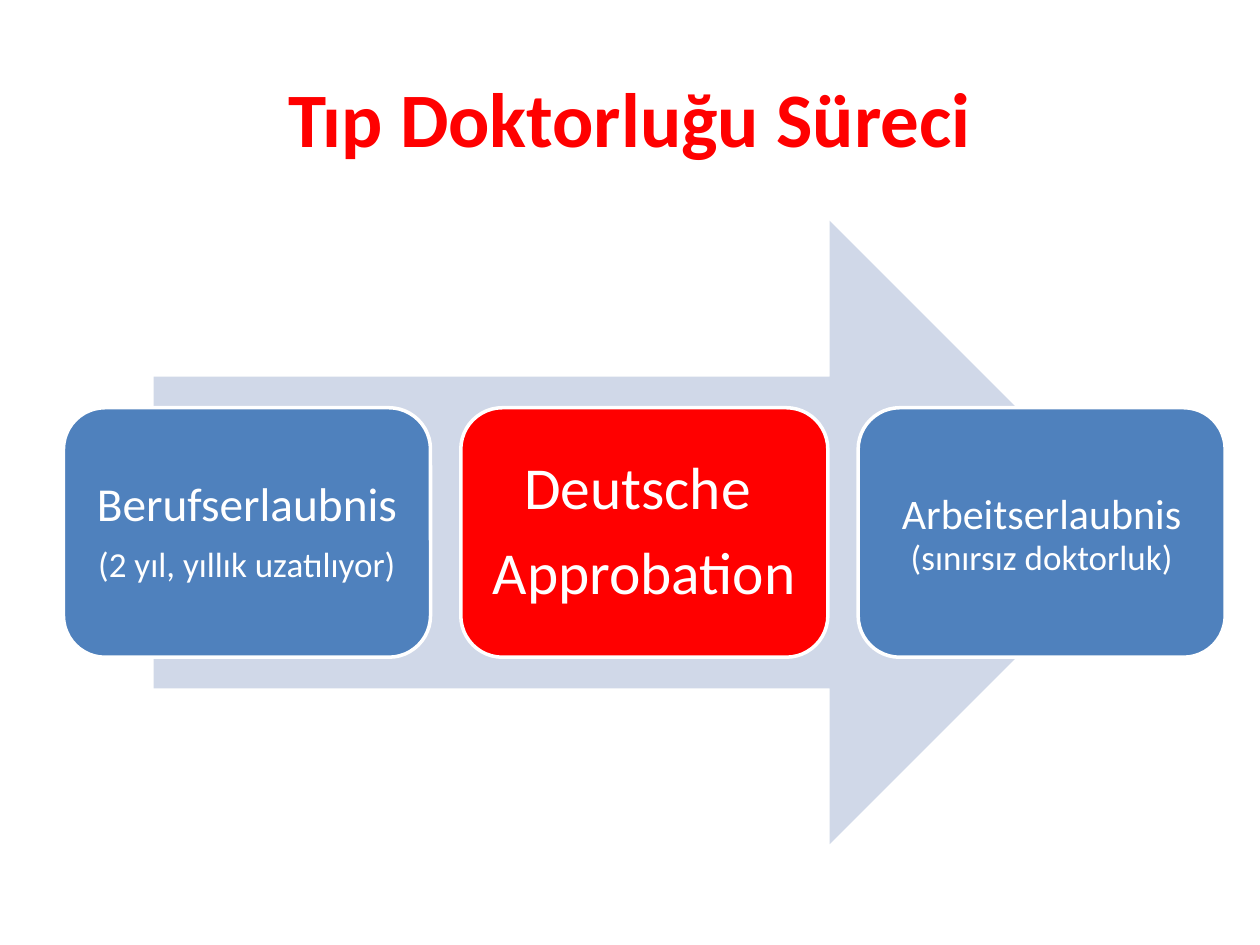
from dataclasses import dataclass

from pptx import Presentation
from pptx.dml.color import RGBColor as RGB
from pptx.enum.shapes import MSO_SHAPE as SHAPE
from pptx.enum.text import MSO_ANCHOR as ANCHOR, PP_ALIGN as ALIGN
from pptx.util import Cm, Pt


@dataclass(frozen=True)
class Theme:
    font: str = "Calibri"
    red: RGB = RGB(0xFF, 0x00, 0x00)
    blue: RGB = RGB(0x4F, 0x81, 0xBD)
    pale: RGB = RGB(0xD0, 0xD8, 0xE8)
    white: RGB = RGB(0xFF, 0xFF, 0xFF)
    title: int = 44
    large: int = 34
    gap: int = 28
    medium: int = 27
    small: int = 24
    note: int = 20


class Deck:
    def __init__(self, prs, theme):
        self.theme = theme
        self.slide = prs.slides.add_slide(prs.slide_layouts[5])

    def place(self, sp, box):
        for name, value in zip(("left", "top", "width", "height"), box):
            setattr(sp, name, Cm(value))

    def add_text(self, p, text, size, color, bold=False):
        r = p.add_run()
        r.text = text
        r.font.color.rgb = color
        style = {"name": self.theme.font, "size": Pt(size), "bold": bold}
        for name, value in style.items():
            setattr(r.font, name, value)

    def title(self, text, box):
        sp = self.slide.shapes.title
        self.place(sp, box)
        tf = sp.text_frame
        tf.vertical_anchor = ANCHOR.MIDDLE
        p = tf.paragraphs[0]
        p.alignment = ALIGN.CENTER
        self.add_text(p, text, self.theme.title, self.theme.red, True)

    def shape(self, kind, box, fill):
        sp = self.slide.shapes.add_shape(kind, *map(Cm, box))
        sp.shadow.inherit = False
        sp.fill.solid()
        sp.fill.fore_color.rgb = fill
        sp.line.fill.background()
        return sp

    def step(self, box, fill, inset, paragraphs):
        sp = self.shape(SHAPE.ROUNDED_RECTANGLE, box, fill)
        sp.line.color.rgb = self.theme.white
        sp.line.width = Pt(2)
        tf = sp.text_frame
        tf.word_wrap = True
        tf.vertical_anchor = ANCHOR.MIDDLE
        for side in ("left", "top", "right", "bottom"):
            setattr(tf, f"margin_{side}", Cm(inset))
        for i, runs in enumerate(paragraphs):
            p = tf.add_paragraph() if i else tf.paragraphs[0]
            style = {
                "alignment": ALIGN.CENTER,
                "line_spacing": 0.9,
                "space_after": Pt(round(0.35 * runs[0][1])),
            }
            for name, value in style.items():
                setattr(p, name, value)
            for text, size in runs:
                self.add_text(p, text, size, self.theme.white)


def main():
    prs = Presentation()
    prs.slide_width, prs.slide_height = Cm(25.4), Cm(19.05)
    theme = Theme()
    deck = Deck(prs, theme)
    deck.title("Tıp Doktorluğu Süreci", (1.27, 0.76, 22.86, 3.18))
    deck.shape(SHAPE.RIGHT_ARROW, (3.1, 4.45, 19.91, 12.57), theme.pale)

    steps = [
        (theme.blue, 0.28, [
            [("Berufserlaubnis", theme.medium)],
            [("(2 yıl, yıllık uzatılıyor)", theme.note)],
        ]),
        (theme.red, 0.35, [
            [("Deutsche ", theme.large)],
            [("Approbation", theme.large)],
        ]),
        (theme.blue, 0.25, [
            [("Arbeitserlaubnis", theme.small), (" ", theme.gap),
             ("(sınırsız doktorluk)", theme.note)],
        ]),
    ]
    left, top, width, height, pitch = 1.28, 8.22, 7.4, 5.03, 8.01
    for i, (fill, inset, paragraphs) in enumerate(steps):
        box = (left + i * pitch, top, width, height)
        deck.step(box, fill, inset, paragraphs)
    prs.save("out.pptx")


if __name__ == "__main__":
    main()
